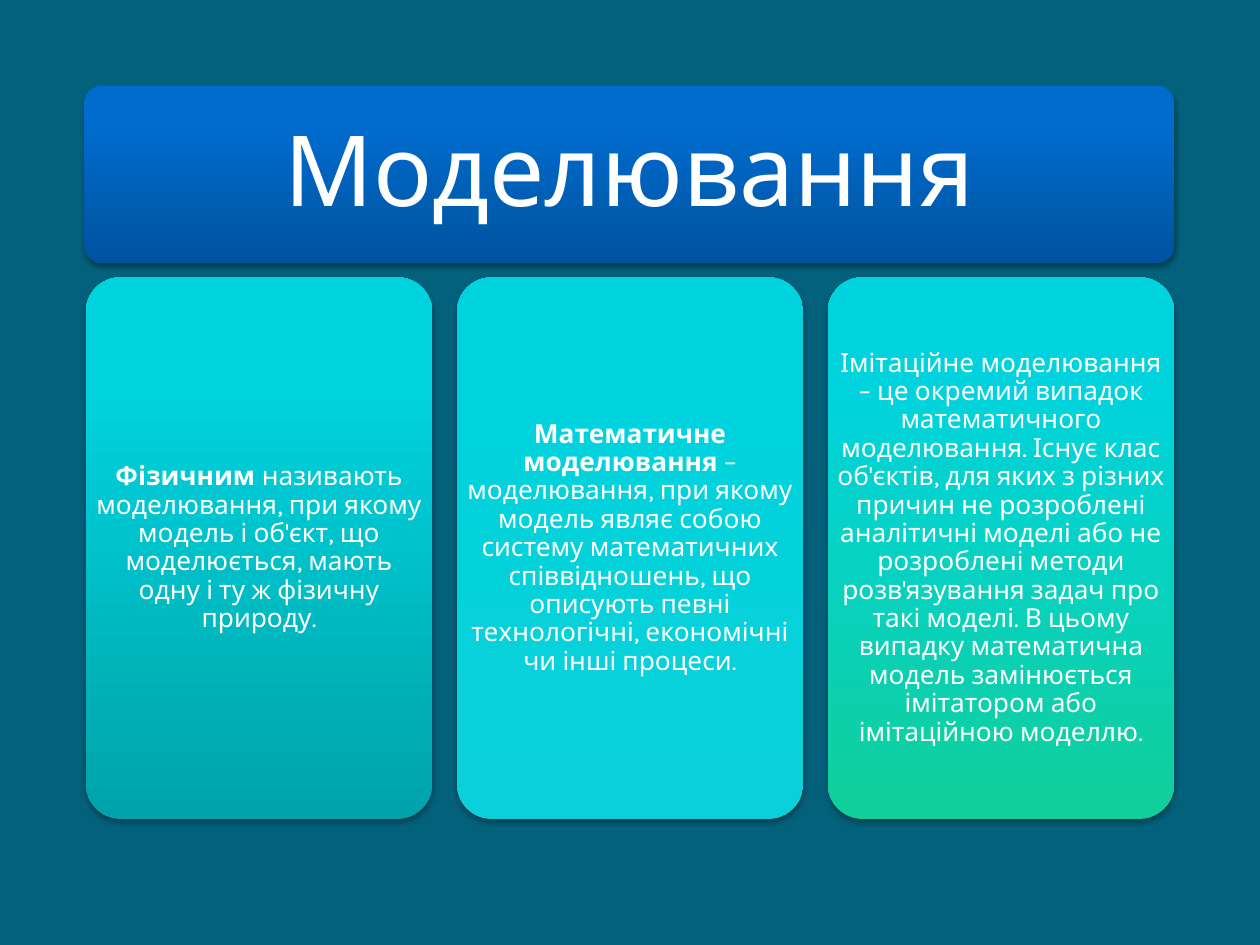
"""Builds a slide that defines three kinds of modelling."""
from copy import deepcopy

from lxml import etree
from pptx import Presentation
from pptx.dml.color import RGBColor
from pptx.enum import shapes, text
from pptx.oxml import ns
from pptx.util import Pt

COLORS = {
    "background": "04617B", "text": "FFFFFF", "shadow": "000000",
    "title": ("00539F", "006CCE", "006DCF"),
    "physical": ("00A3AA", "00D3DD", "00D4DE"),
    "mathematical": ("0BD0D9", "00D3DD", "00D4DE"),
    "simulation": ("10CF9B", "00D3DD", "00D4DE"),
}
CARDS = [
    ("physical", "Фізичним ",
     "називають моделювання, при якому модель і об'єкт, що моделюється, "
     "мають одну і ту ж фізичну природу."),
    ("mathematical", "Математичне моделювання",
     " – моделювання, при якому модель являє собою систему математичних "
     "співвідношень, що описують певні технологічні, економічні чи інші процеси."),
    ("simulation", "",
     "Імітаційне моделювання – це окремий випадок математичного моделювання. "
     "Існує клас об'єктів, для яких з різних причин не розроблені аналітичні "
     "моделі або не розроблені методи розв'язування задач про такі моделі. "
     "В цьому випадку математична модель замінюється імітатором або "
     "імітаційною моделлю."),
]
CARD_LEFT, CARD_TOP, CARD_WIDTH, CARD_HEIGHT, CARD_PITCH = 49, 158.5, 198, 309.5, 212


def add_shadow(panel):
    panel.shadow.inherit = False
    effects = panel.element.spPr.find(ns.qn("a:effectLst"))
    shadow = etree.SubElement(
        effects, ns.qn("a:outerShdw"), blurRad=str(Pt(3.1)), dist=str(Pt(1.8)),
        dir="5400000", rotWithShape="0")
    color = etree.SubElement(shadow, ns.qn("a:srgbClr"), val=COLORS["shadow"])
    etree.SubElement(color, ns.qn("a:alpha"), val="35000")


def add_panel(slide, box, palette):
    panel = slide.shapes.add_shape(shapes.MSO_SHAPE.ROUNDED_RECTANGLE, *box)
    panel.adjustments[0] = 0.1
    panel.line.fill.background()
    panel.fill.gradient()
    panel.fill.gradient_angle = 90
    stops = panel.element.spPr.find(".//" + ns.qn("a:gsLst"))
    stops.append(deepcopy(stops[-1]))
    for stop, position, color in zip(panel.fill.gradient_stops, (0, 0.8, 1), COLORS[palette]):
        stop.position = position
        stop.color.rgb = RGBColor.from_string(color)
    add_shadow(panel)


def write_text(holder, runs, size, inset):
    frame = holder.text_frame
    frame.word_wrap = True
    frame.auto_size = text.MSO_AUTO_SIZE.NONE
    frame.vertical_anchor = text.MSO_ANCHOR.MIDDLE
    frame.margin_left = frame.margin_right = Pt(inset)
    frame.margin_top = frame.margin_bottom = Pt(inset)
    paragraph = frame.paragraphs[0]
    paragraph.alignment = text.PP_ALIGN.CENTER
    paragraph.line_spacing = 0.9
    for wording, bold in runs:
        run = paragraph.add_run()
        run.text = wording
        run.font.name = "Karla"
        run.font.size = Pt(size)
        run.font.bold = bold
        run.font.color.rgb = RGBColor.from_string(COLORS["text"])


def add_heading(slide, wording):
    box = Pt(48.25), Pt(49), Pt(622.75), Pt(101.5)
    add_panel(slide, box, "title")
    title = slide.shapes.title
    title.left, title.top, title.width, title.height = box
    write_text(title, [(wording, False)], size=56, inset=16.5)
    slide.shapes.element.append(title.element)


def add_card(slide, index, palette, term, definition):
    box = (Pt(CARD_LEFT + index * CARD_PITCH), Pt(CARD_TOP),
           Pt(CARD_WIDTH), Pt(CARD_HEIGHT))
    add_panel(slide, box, palette)
    runs = [(term, True)] if term else []
    write_text(slide.shapes.add_textbox(*box), runs + [(definition, False)],
               size=15, inset=4.5)


def main():
    deck = Presentation()
    deck.slide_width, deck.slide_height = Pt(720), Pt(540)
    slide = deck.slides.add_slide(deck.slide_layouts[5])
    slide.background.fill.solid()
    slide.background.fill.fore_color.rgb = RGBColor.from_string(COLORS["background"])
    add_heading(slide, "Моделювання")
    for index, card in enumerate(CARDS):
        add_card(slide, index, *card)
    deck.save("out.pptx")


if __name__ == "__main__":
    main()
